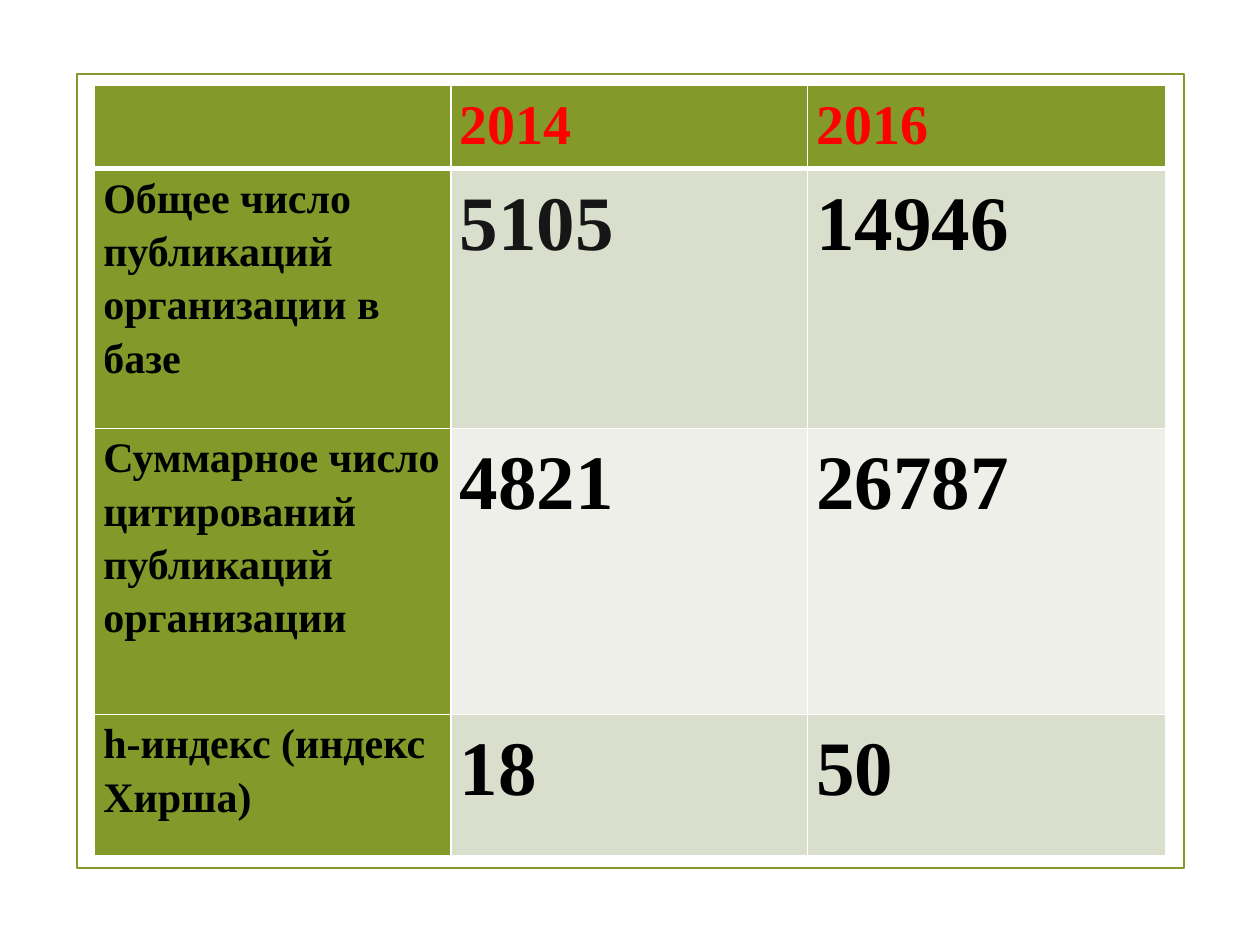
from pptx import Presentation
from pptx.dml.color import RGBColor
from pptx.enum.shapes import MSO_SHAPE as Shape
from pptx.oxml.ns import qn
from pptx.util import Inches, Pt
from lxml.etree import SubElement

GREEN = RGBColor(0x83, 0x99, 0x2A)
SAGE = RGBColor(0xD9, 0xDE, 0xCD)
PALE = RGBColor(0xED, 0xEF, 0xE8)
RED = RGBColor(0xFF, 0x00, 0x00)
BLACK = RGBColor(0x00, 0x00, 0x00)
CHARCOAL = RGBColor(0x16, 0x16, 0x16)
WHITE = RGBColor(0xFF, 0xFF, 0xFF)

COL_WIDTHS = [2.83, 2.83, 2.84]
ROW_HEIGHTS = [0.66, 2.06, 2.27, 1.12]
ROWS = [
    ["", "2014", "2016"],
    ["Общее число публикаций организации в базе", "5105", "14946"],
    ["Суммарное число цитирований публикаций организации", "4821", "26787"],
    ["h-индекс (индекс Хирша)", "18", "50"],
]
MARGINS = {
    "margin_left": Inches(0.07),
    "margin_right": Inches(0.07),
    "margin_top": 0,
    "margin_bottom": 0,
}
HEADER_FONT = {"name": "Times New Roman", "size": Pt(32), "bold": True}
LABEL_FONT = {**HEADER_FONT, "size": Pt(24)}
VALUE_FONT = {**HEADER_FONT, "size": Pt(44)}


def set_attrs(obj, values):
    for name, value in values.items():
        setattr(obj, name, value)


def add_frame(s):
    sp = s.shapes.add_shape(
        Shape.RECTANGLE, Inches(0.61), Inches(0.59), Inches(8.79), Inches(6.3)
    )
    sp.shadow.inherit = False
    sp.fill.background()
    sp.line.color.rgb = GREEN
    sp.line.width = Pt(1.25)


def set_borders(cell, widths):
    tc_pr = cell._tc.get_or_add_tcPr()
    for index, (side, width) in enumerate(widths.items()):
        ln = tc_pr.makeelement(qn(f"a:{side}"), {"w": str(Pt(width))})
        fill = SubElement(ln, qn("a:solidFill"))
        SubElement(fill, qn("a:srgbClr"), val=str(WHITE))
        tc_pr.insert(index, ln)


def fill_cell(cell, text, fill, font, color):
    set_attrs(cell, MARGINS)
    cell.fill.solid()
    cell.fill.fore_color.rgb = fill
    p = cell.text_frame.paragraphs[0]
    p.line_spacing = 1.15
    set_attrs(p.font, font)
    if text:
        r = p.add_run()
        r.text = text
        set_attrs(r.font, font)
        r.font.color.rgb = color


def cell_style(row, col):
    if row == 0:
        return GREEN, HEADER_FONT, RED
    if col == 0:
        return GREEN, LABEL_FONT, BLACK
    fill = SAGE if row % 2 else PALE
    return fill, VALUE_FONT, CHARCOAL if (row, col) == (1, 1) else BLACK


def add_index_table(s):
    table = s.shapes.add_table(
        len(ROWS), len(COL_WIDTHS),
        Inches(0.75), Inches(0.68),
        Inches(sum(COL_WIDTHS)), Inches(sum(ROW_HEIGHTS)),
    ).table
    for column, width in zip(table.columns, COL_WIDTHS):
        column.width = Inches(width)
    for row, height in zip(table.rows, ROW_HEIGHTS):
        row.height = Inches(height)
    for i, texts in enumerate(ROWS):
        for j, text in enumerate(texts):
            cell = table.cell(i, j)
            fill_cell(cell, text, *cell_style(i, j))
            top, bottom = 3 if i == 1 else 1, 3 if i == 0 else 1
            set_borders(cell, {"lnL": 1, "lnR": 1, "lnT": top, "lnB": bottom})


def main():
    prs = Presentation()
    prs.slide_width, prs.slide_height = Inches(10), Inches(7.5)
    s = prs.slides.add_slide(prs.slide_layouts[6])
    add_frame(s)
    add_index_table(s)
    prs.save("out.pptx")


if __name__ == "__main__":
    main()
